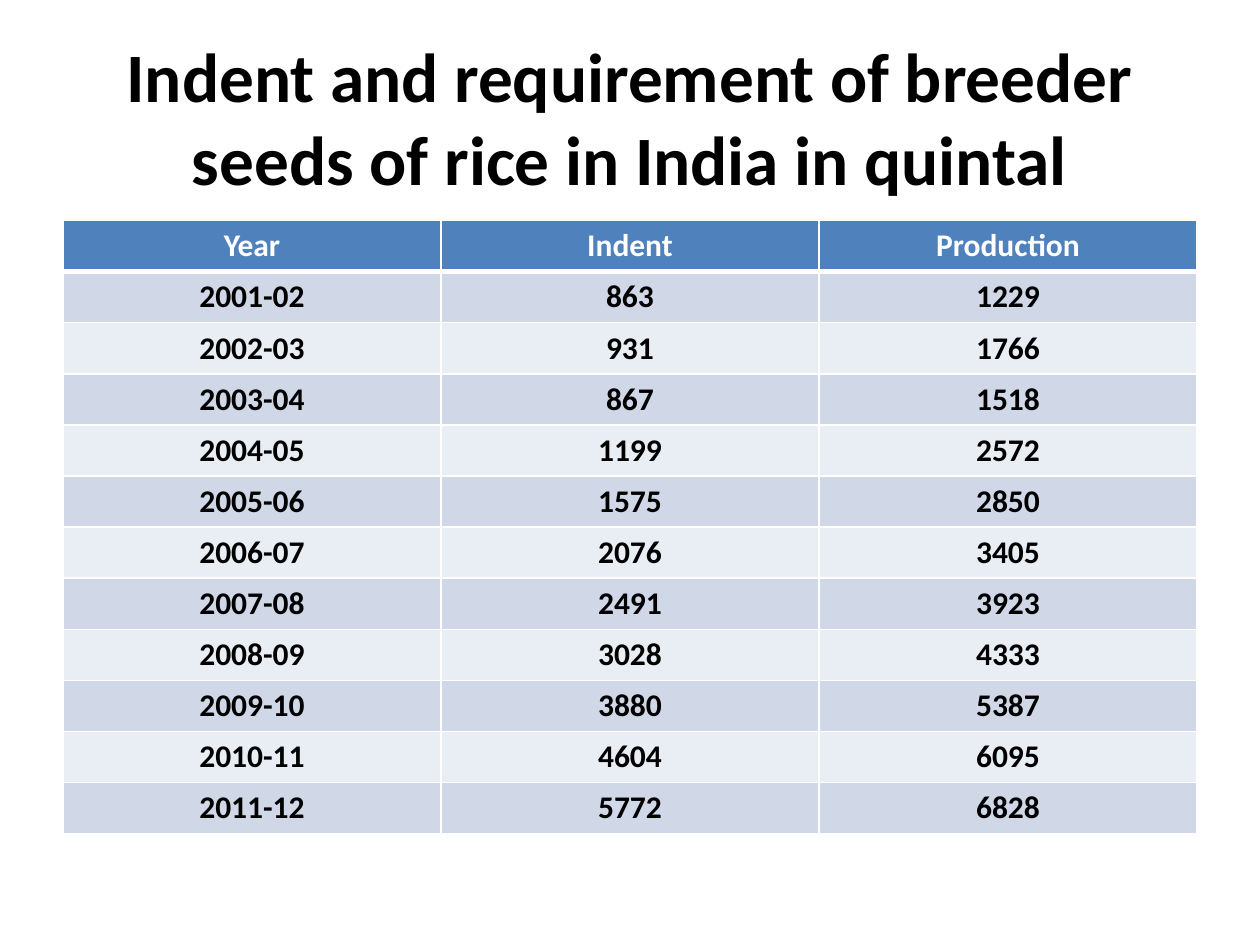
from lxml import etree
from pptx import Presentation
from pptx.dml.color import RGBColor
from pptx.enum.text import MSO_ANCHOR, MSO_AUTO_SIZE, PP_ALIGN
from pptx.oxml.ns import qn
from pptx.util import Inches, Pt

COLORS = {
    "text": "000000",
    "header_text": "FFFFFF",
    "header": "4F81BD",
    "band_dark": "D0D8E8",
    "band_light": "E9EDF4",
    "border": "FFFFFF",
}

HEADINGS = ("Year", "Indent", "Production")
SEED_DATA = [
    ("2001-02", 863, 1229),
    ("2002-03", 931, 1766),
    ("2003-04", 867, 1518),
    ("2004-05", 1199, 2572),
    ("2005-06", 1575, 2850),
    ("2006-07", 2076, 3405),
    ("2007-08", 2491, 3923),
    ("2008-09", 3028, 4333),
    ("2009-10", 3880, 5387),
    ("2010-11", 4604, 6095),
    ("2011-12", 5772, 6828),
]


class SlideBuilder:
    font = "Calibri"

    def __init__(self, slide):
        self.s = slide

    def add_text(self, tf, text, size, color):
        p = tf.paragraphs[0]
        p.alignment = PP_ALIGN.CENTER
        r = p.add_run()
        r.text = text
        style = {"name": self.font, "size": Pt(size), "bold": True}
        for name, value in style.items():
            setattr(r.font, name, value)
        r.font.color.rgb = RGBColor.from_string(COLORS[color])

    def title(self, text, left, top, width, height, size):
        sp = self.s.shapes.title
        box = {"left": left, "top": top, "width": width, "height": height}
        for name, value in box.items():
            setattr(sp, name, Inches(value))
        tf = sp.text_frame
        frame = {"word_wrap": True, "auto_size": MSO_AUTO_SIZE.NONE,
                 "vertical_anchor": MSO_ANCHOR.MIDDLE}
        for name, value in frame.items():
            setattr(tf, name, value)
        self.add_text(tf, text, size, "text")

    def borders(self, cell, **widths):
        tc_pr = cell._tc.get_or_add_tcPr()
        for side in "LRTB":
            ln = etree.SubElement(tc_pr, qn(f"a:ln{side}"),
                                  w=str(Pt(widths.get(side, 1))))
            fill = etree.SubElement(ln, qn("a:solidFill"))
            etree.SubElement(fill, qn("a:srgbClr"), val=COLORS["border"])

    def table(self, rows, left, top, width, height, size):
        lengths = [Inches(v) for v in (left, top, width, height)]
        table = self.s.shapes.add_table(len(rows), len(rows[0]), *lengths).table
        for i, row in enumerate(rows):
            table.rows[i].height = round(Inches(height) / len(rows))
            if i == 0:
                fill, color = "header", "header_text"
            else:
                fill, color = ("band_dark" if i % 2 else "band_light"), "text"
            # A thick rule separates the header from the body
            rule = {0: {"B": 3}, 1: {"T": 3}}.get(i, {})
            for j, value in enumerate(row):
                cell = table.cell(i, j)
                self.borders(cell, **rule)
                cell.fill.solid()
                cell.fill.fore_color.rgb = RGBColor.from_string(COLORS[fill])
                self.add_text(cell.text_frame, str(value), size, color)


def main():
    prs = Presentation()
    prs.slide_width, prs.slide_height = Inches(10), Inches(7.5)
    builder = SlideBuilder(prs.slides.add_slide(prs.slide_layouts[5]))

    # Title
    builder.title("Indent and requirement of breeder seeds of rice in India in quintal",
                  0.5, 0.3, 9, 1.25, size=39.6)

    # Seed table
    builder.table([HEADINGS, *SEED_DATA], 0.5, 1.75, 9, 4.87, size=18)

    prs.save("out.pptx")


if __name__ == "__main__":
    main()
